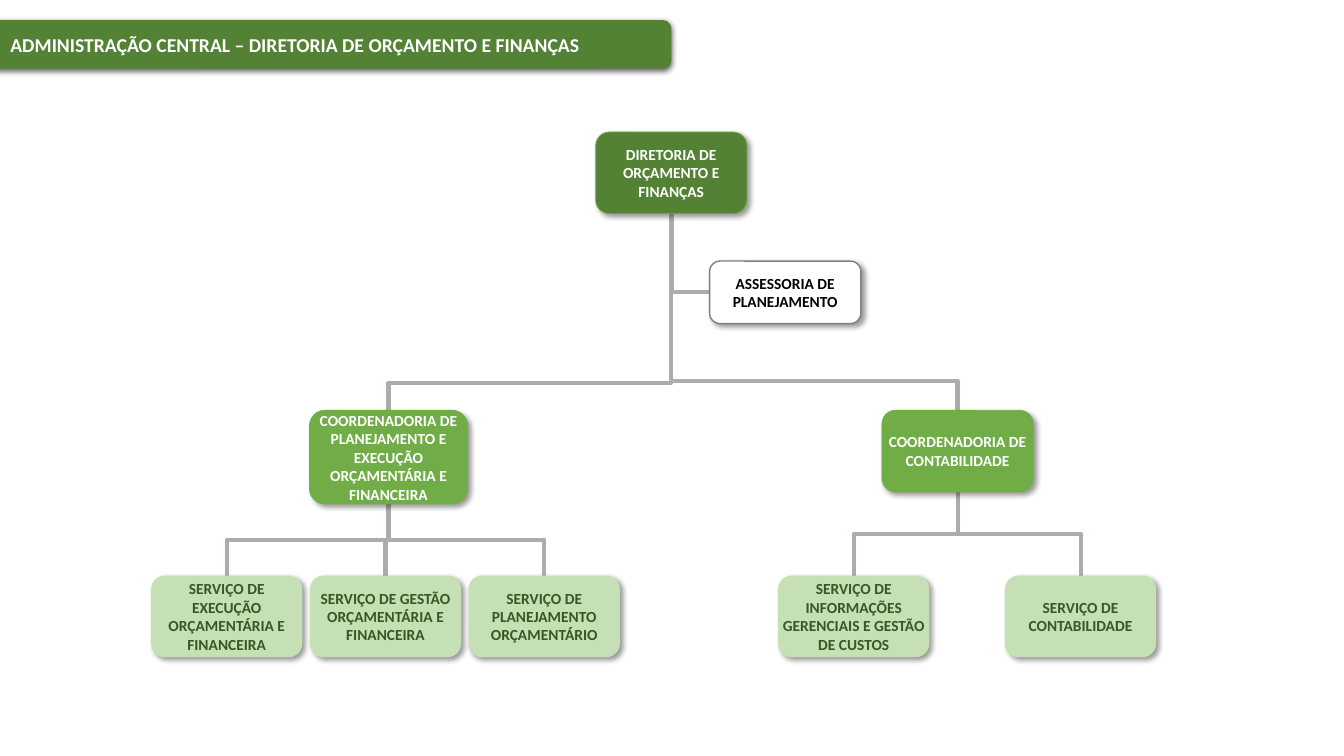
from dataclasses import dataclass
from typing import Optional

from lxml import etree
from pptx import Presentation
from pptx import util as u
from pptx.dml.color import RGBColor
from pptx.enum import shapes, text
from pptx.oxml import ns

COLUMNS, ROWS = 133.33, 75
CELL = u.Inches(0.1)


@dataclass(frozen=True)
class Theme:
    font: str = "Calibri"
    dark: str = "548235"
    middle: str = "70AD47"
    light: str = "C5E0B4"
    ink: str = "385723"
    white: str = "FFFFFF"
    black: str = "000000"
    gray: str = "808080"
    link: str = "AFABAB"
    title_size: float = 14
    box_size: float = 11
    link_width: float = 3


THEME = Theme()


@dataclass(frozen=True)
class Shadow:
    alpha: int
    blur: float
    distance: float
    angle: int


@dataclass(frozen=True)
class Style:
    fill: str
    color: str
    line: Optional[str] = None
    line_width: float = 0.5
    size: float = THEME.box_size
    shadow: Shadow = Shadow(40, 4, 3, 45)


@dataclass(frozen=True)
class Unit:
    label: str
    column: float
    row: float
    style: Style
    width: float = 15
    height: float = 8.1

    @property
    def center(self) -> float:
        return self.column + self.width / 2

    @property
    def bottom(self) -> float:
        return self.row + self.height


@dataclass(frozen=True)
class Link:
    parent: Unit
    child: Unit
    bend: float = 0.5


DIRECTION = Style(THEME.dark, THEME.white, THEME.middle)
COORDINATION = Style(THEME.middle, THEME.white, THEME.middle)
SERVICE = Style(THEME.light, THEME.ink)
ADVISORY = Style(THEME.white, THEME.black, THEME.gray, 1)
BANNER = Style(THEME.dark, THEME.white, size=THEME.title_size,
               shadow=Shadow(63, 4.5, 1.5, 90))

SERVICE_ROW, COORDINATION_ROW = 57.1, 40.7
title = Unit("ADMINISTRAÇÃO CENTRAL – DIRETORIA DE ORÇAMENTO E FINANÇAS",
             -2.4, 2, BANNER, 69, 4.8)
board = Unit("DIRETORIA DE ORÇAMENTO E FINANÇAS", 59.1, 13.1, DIRECTION)
advisory = Unit("ASSESSORIA DE PLANEJAMENTO", 70.4, 25.9, ADVISORY, height=6.2)
planning = Unit("COORDENADORIA DE PLANEJAMENTO E EXECUÇÃO ORÇAMENTÁRIA E FINANCEIRA",
                30.7, COORDINATION_ROW, COORDINATION, 15.7, 9.3)
accounting = Unit("COORDENADORIA DE CONTABILIDADE", 87.5, COORDINATION_ROW, COORDINATION)
planning_services = [
    Unit(label, 15 + 15.75 * index, SERVICE_ROW, SERVICE)
    for index, label in enumerate([
        "SERVIÇO DE EXECUÇÃO ORÇAMENTÁRIA E FINANCEIRA",
        "SERVIÇO DE GESTÃO ORÇAMENTÁRIA E FINANCEIRA",
        "SERVIÇO DE PLANEJAMENTO ORÇAMENTÁRIO",
    ])
]
accounting_services = [
    Unit(label, 77.2 + 22.5 * index, SERVICE_ROW, SERVICE)
    for index, label in enumerate([
        "SERVIÇO DE INFORMAÇÕES GERENCIAIS E GESTÃO DE CUSTOS",
        "SERVIÇO DE CONTABILIDADE",
    ])
]
units = [planning, accounting, board, *planning_services, *accounting_services, advisory]
links = [
    Link(board, planning, 0.86),
    Link(board, accounting, 0.85),
    *[Link(planning, service) for service in planning_services],
    *[Link(accounting, service) for service in accounting_services],
]


def grid(count: float) -> u.Emu:
    return u.Emu(round(count * CELL))


def add_child(parent, tag: str, **attributes):
    child = etree.SubElement(parent, ns.qn(tag))
    for name, value in attributes.items():
        child.set(name, str(value))
    return child


def add_shadow(box, shadow: Shadow) -> None:
    box.shadow.inherit = False
    effects = box._element.spPr.find(ns.qn("a:effectLst"))
    outer = add_child(effects, "a:outerShdw", blurRad=u.Pt(shadow.blur),
                      dist=u.Pt(shadow.distance), dir=shadow.angle * 60000,
                      algn="ctr", rotWithShape=0)
    color = add_child(outer, "a:srgbClr", val=THEME.black)
    add_child(color, "a:alpha", val=shadow.alpha * 1000)


def write(frame, label: str, *, size: float, color: str, align, left: float = 0) -> None:
    frame.word_wrap = True
    frame.vertical_anchor = text.MSO_ANCHOR.MIDDLE
    frame.margin_left = grid(left)
    frame.margin_right = frame.margin_top = frame.margin_bottom = 0
    para = frame.paragraphs[0]
    para.alignment = align
    span = para.add_run()
    span.text = label
    span.font.name = THEME.font
    span.font.size = u.Pt(size)
    span.font.bold = True
    span.font.color.rgb = RGBColor.from_string(color)


def draw_unit(page, unit: Unit, align=text.PP_ALIGN.CENTER, left: float = 0) -> None:
    style = unit.style
    box = page.shapes.add_shape(
        shapes.MSO_SHAPE.ROUNDED_RECTANGLE, grid(unit.column), grid(unit.row),
        grid(unit.width), grid(unit.height))
    box.fill.solid()
    box.fill.fore_color.rgb = RGBColor.from_string(style.fill)
    if style.line:
        box.line.color.rgb = RGBColor.from_string(style.line)
        box.line.width = u.Pt(style.line_width)
    else:
        box.line.fill.background()
    add_shadow(box, style.shadow)
    write(box.text_frame, unit.label, size=style.size, color=style.color,
          align=align, left=left)


def draw_elbow(page, parent: Unit, column: float, row: float,
               bend: Optional[float] = None) -> None:
    middle_column, middle_row = (parent.center + column) / 2, (parent.bottom + row) / 2
    half_run, half_drop = abs(column - parent.center) / 2, (row - parent.bottom) / 2
    side = 1 if column > parent.center else -1
    elbow = page.shapes.add_connector(
        shapes.MSO_CONNECTOR.ELBOW,
        grid(middle_column + side * half_drop), grid(middle_row - half_run),
        grid(middle_column - side * half_drop), grid(middle_row + half_run))
    elbow.line.color.rgb = RGBColor.from_string(THEME.link)
    elbow.line.width = u.Pt(THEME.link_width)
    properties = elbow._element.spPr
    properties.find(ns.qn("a:xfrm")).set("rot", str((180 + 90 * side) * 60000))
    geometry = properties.find(ns.qn("a:prstGeom"))
    if bend is None:
        geometry.set("prst", "bentConnector2")
    else:
        add_child(geometry.find(ns.qn("a:avLst")), "a:gd", name="adj1",
                  fmla=f"val {round(bend * 100000)}")
    add_child(properties, "a:effectLst")


def main() -> None:
    deck = Presentation()
    deck.slide_width, deck.slide_height = grid(COLUMNS), grid(ROWS)
    page = deck.slides.add_slide(deck.slide_layouts[6])
    for link in links:
        draw_elbow(page, link.parent, link.child.center, link.child.row, link.bend)
    draw_elbow(page, board, advisory.column, advisory.row + advisory.height / 2)
    for unit in units:
        draw_unit(page, unit)
    draw_unit(page, title, align=text.PP_ALIGN.LEFT, left=3.2)
    deck.save("out.pptx")


if __name__ == "__main__":
    main()
